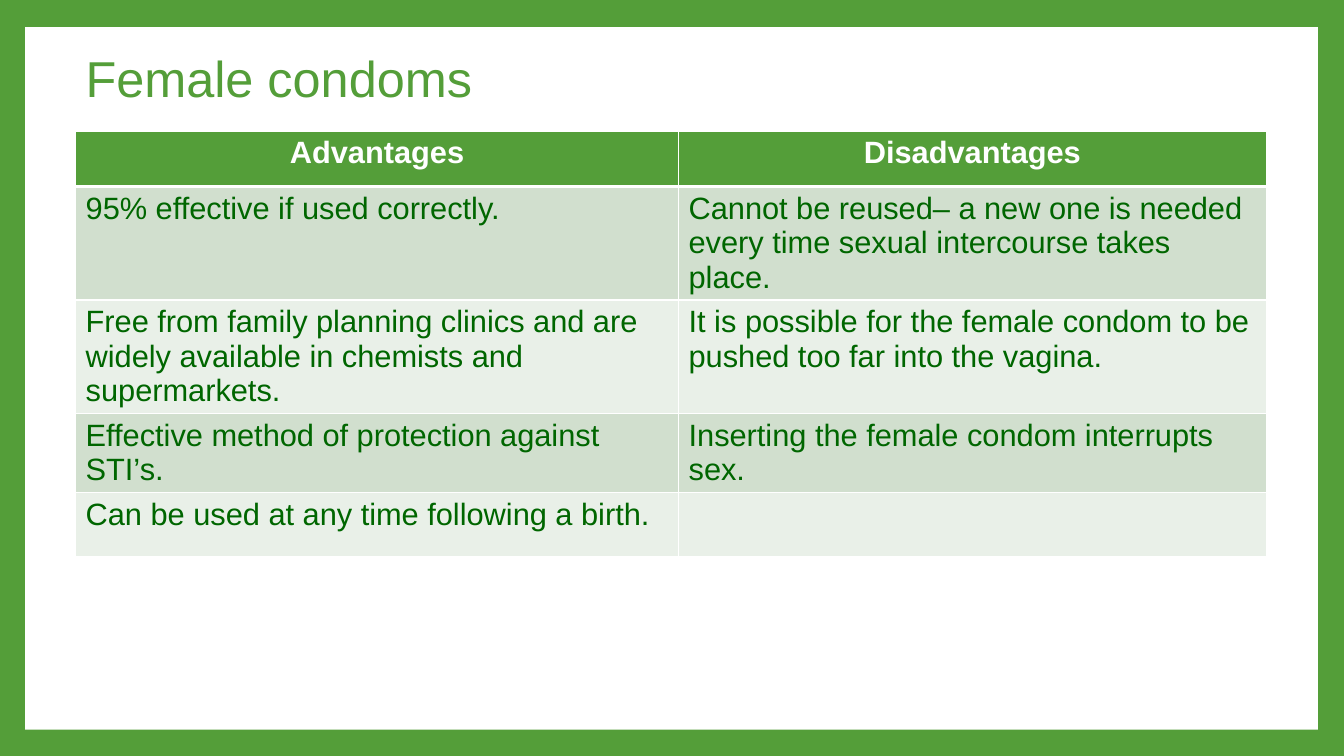
from dataclasses import dataclass

from lxml.etree import SubElement
from pptx import Presentation
from pptx.dml.color import RGBColor
from pptx.enum.shapes import MSO_SHAPE
from pptx.enum.text import MSO_ANCHOR, PP_ALIGN
from pptx.oxml.ns import qn
from pptx.util import Inches, Pt

COLORS = {
    "green": "549E39",
    "white": "FFFFFF",
    "text": "006600",
    "band_dark": "D1DFCE",
    "band_light": "E9F0E8",
}


@dataclass
class Row:
    height: float
    advantage: str
    disadvantage: str


ROWS = [
    Row(0.55, "Advantages", "Disadvantages"),
    Row(0.92, "95% effective if used correctly.",
        "Cannot be reused– a new one is needed every time sexual intercourse takes place."),
    Row(0.64, "Free from family planning clinics and are widely available in chemists and supermarkets.",
        "It is possible for the female condom to be pushed too far into the vagina."),
    Row(0.64, "Effective method of protection against STI’s.",
        "Inserting the female condom interrupts sex."),
    Row(0.64, "Can be used at any time following a birth.", ""),
]
COLUMN_WIDTHS = [5.98, 5.83]


def rgb(name: str) -> RGBColor:
    return RGBColor.from_string(COLORS[name])


def write(p, text: str, color: str, **formats) -> None:
    r = p.add_run()
    r.text = text
    for name, value in {"name": "Arial", **formats}.items():
        setattr(r.font, name, value)
    r.font.color.rgb = rgb(color)


def set_borders(cell, bottom: float, top: float) -> None:
    tcPr = cell._tc.get_or_add_tcPr()
    widths = {"a:lnL": 1, "a:lnR": 1, "a:lnT": top, "a:lnB": bottom}
    for tag, width in widths.items():
        ln = SubElement(tcPr, qn(tag), w=str(Pt(width)))
        fill = SubElement(ln, qn("a:solidFill"))
        SubElement(fill, qn("a:srgbClr"), val=COLORS["white"])


def add_panel(s) -> None:
    sp = s.shapes.add_shape(MSO_SHAPE.RECTANGLE, Inches(0.25), Inches(0.27),
                            Inches(12.82), Inches(6.97))
    sp.shadow.inherit = False
    sp.fill.solid()
    sp.fill.fore_color.rgb = rgb("white")
    sp.line.fill.background()


def add_table(s) -> None:
    table = s.shapes.add_table(
        len(ROWS), len(COLUMN_WIDTHS), Inches(0.75), Inches(1.3),
        Inches(sum(COLUMN_WIDTHS)), Inches(sum(row.height for row in ROWS))).table
    for column, width in zip(table.columns, COLUMN_WIDTHS):
        column.width = Inches(width)
    for i, row in enumerate(ROWS):
        table.rows[i].height = Inches(row.height)
        header = i == 0
        band = "green" if header else "band_dark" if i % 2 else "band_light"
        for j, text in enumerate((row.advantage, row.disadvantage)):
            cell = table.cell(i, j)
            set_borders(cell, bottom=3 if header else 1, top=3 if i == 1 else 1)
            cell.fill.solid()
            cell.fill.fore_color.rgb = rgb(band)
            p = cell.text_frame.paragraphs[0]
            p.alignment = PP_ALIGN.CENTER if header else PP_ALIGN.LEFT
            if text:
                write(p, text, "white" if header else "text", size=Pt(22), bold=header)


def add_title(s) -> None:
    tf = s.shapes.add_textbox(Inches(0.75), Inches(0.07), Inches(10.8), Inches(1.48)).text_frame
    tf.word_wrap = True
    tf.vertical_anchor = MSO_ANCHOR.MIDDLE
    p = tf.paragraphs[0]
    p.line_spacing = 0.9
    write(p, "Female condoms", "green", size=Pt(36))


def main() -> None:
    prs = Presentation()
    prs.slide_width, prs.slide_height = Inches(13.33), Inches(7.5)
    s = prs.slides.add_slide(prs.slide_layouts[6])

    # Green frame around a white panel
    s.background.fill.solid()
    s.background.fill.fore_color.rgb = rgb("green")
    add_panel(s)

    # Content
    add_table(s)
    add_title(s)
    prs.save("out.pptx")


if __name__ == "__main__":
    main()
